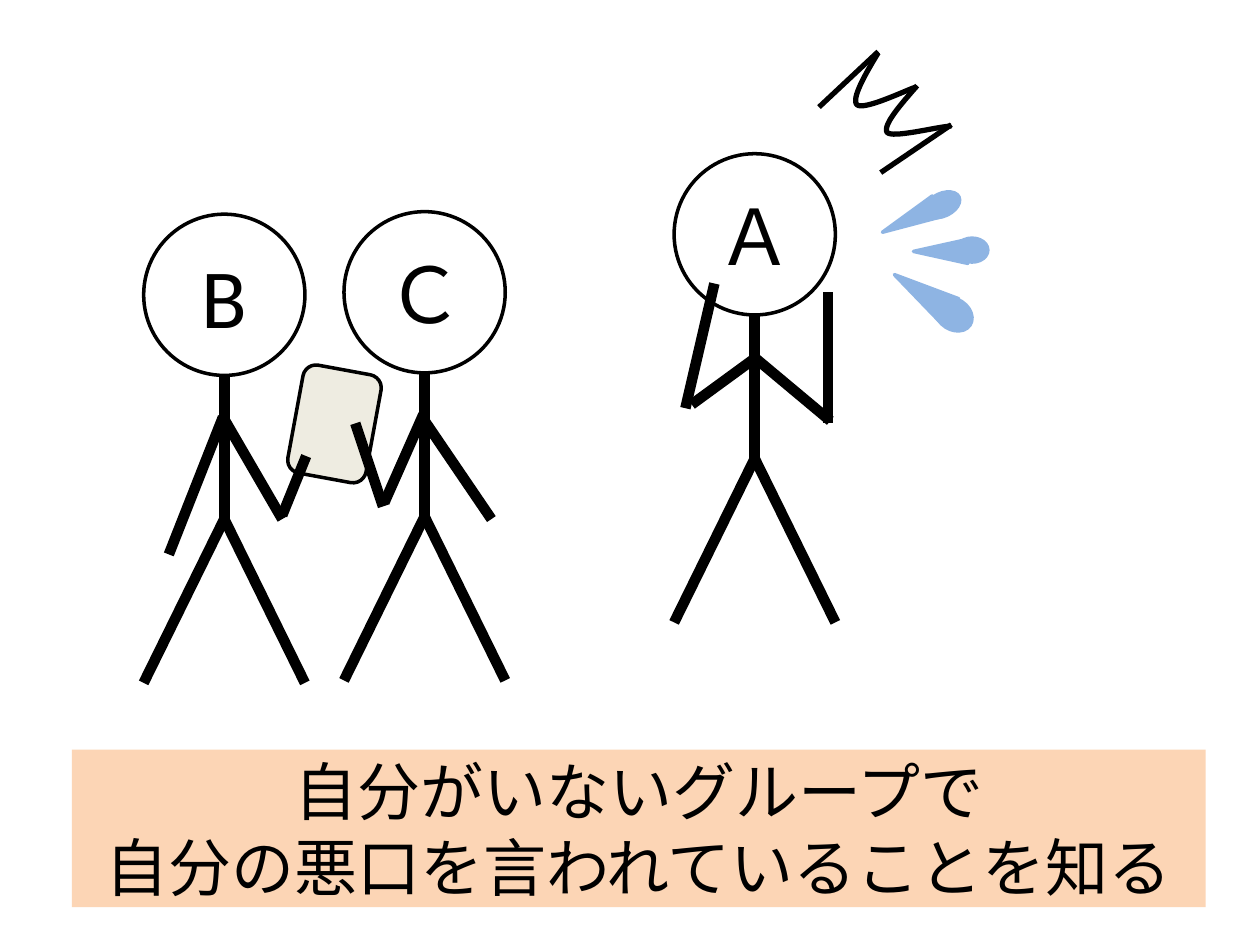
from dataclasses import dataclass

from lxml import etree
from pptx import Presentation
from pptx.dml.color import RGBColor
from pptx.enum.shapes import MSO_CONNECTOR, MSO_SHAPE
from pptx.enum.text import MSO_ANCHOR, PP_ALIGN
from pptx.oxml.ns import qn
from pptx.util import Emu, Pt

PX = 9144  # EMU per px, 100 px to the inch
STRAIGHT = MSO_CONNECTOR.STRAIGHT
RECT, ROUNDED = MSO_SHAPE.RECTANGLE, MSO_SHAPE.ROUNDED_RECTANGLE
HEAD = MSO_SHAPE.FLOWCHART_CONNECTOR
OVAL, TRIANGLE = MSO_SHAPE.OVAL, MSO_SHAPE.ISOSCELES_TRIANGLE
MIDDLE, CENTER = MSO_ANCHOR.MIDDLE, PP_ALIGN.CENTER


@dataclass(frozen=True)
class Theme:
    font: str = "Calibri"
    ink: str = "000000"
    paper: str = "FFFFFF"
    tablet: str = "EEECE1"
    caption: str = "FCD5B5"
    sweat: str = "8EB4E3"
    caption_size: int = 36
    name_size: int = 44
    big_name_size: int = 48
    outline: int = 2
    stroke: int = 3
    limb: int = 6


class Scene:
    def __init__(self, s, theme):
        self.s, self.theme = s, theme

    def set_line(self, line, color, width):
        line.color.rgb = RGBColor.from_string(color)
        line.width = Pt(width)

    def shape(self, kind, box, fill, line=None, rotation=0):
        sp = self.s.shapes.add_shape(kind, *(Emu(v * PX) for v in box))
        sp.shadow.inherit = False
        sp.rotation = rotation
        sp.fill.solid()
        sp.fill.fore_color.rgb = RGBColor.from_string(fill)
        if line:
            self.set_line(sp.line, line, self.theme.outline)
        else:
            sp.line.fill.background()
        return sp

    def label(self, sp, text, size):
        tf = sp.text_frame
        tf.word_wrap = True
        tf.vertical_anchor = MIDDLE
        p = tf.paragraphs[0]
        p.text = text
        p.alignment = CENTER
        for r in p.runs:
            r.font.name = self.theme.font
            r.font.size = Pt(size)
            r.font.color.rgb = RGBColor.from_string(self.theme.ink)

    def line(self, start, end, width):
        sp = self.s.shapes.add_connector(
            STRAIGHT, *(Emu(v * PX) for v in (*start, *end)))
        self.set_line(sp.line, self.theme.ink, width)
        etree.SubElement(sp._element.spPr, qn("a:effectLst"))

    def curve(self, start, *segments, steps=16):
        """Draw cubic Bezier segments, each (control, control, end)."""
        points, last = [], start
        for c1, c2, end in segments:
            for i in range(1, steps + 1):
                t = i / steps
                u = 1 - t
                points.append(tuple(
                    round((u**3 * a + 3 * u * u * t * b + 3 * u * t * t * c + t**3 * d) * PX)
                    for a, b, c, d in zip(last, c1, c2, end)))
            last = end
        fb = self.s.shapes.build_freeform(*(v * PX for v in start))
        fb.add_line_segments(points, close=False)
        sp = fb.convert_to_shape()
        sp.shadow.inherit = False
        sp.fill.background()
        self.set_line(sp.line, self.theme.ink, self.theme.stroke)

    def stick_figure(self, name, size, cx, top, arms):
        """Draw head, trunk and legs from the head's top centre, then the arm parts."""
        t = self.theme
        head = self.shape(HEAD, (cx - 64, top, 128, 128), t.paper, t.ink)
        self.label(head, name, size)
        neck, hip, feet = top + 128, top + 242, top + 372
        self.line((cx, neck), (cx, hip), t.limb)
        for side in (-64, 64):
            self.line((cx, hip), (cx + side, feet), t.limb)
        for start, end in arms:
            self.line(start, end, t.limb)

    def sweat_drop(self, bulb, tail, rotation):
        color = self.theme.sweat
        self.shape(OVAL, bulb, color, color, rotation)
        self.shape(TRIANGLE, tail, color, color, rotation)

    def caption(self, box, text):
        sp = self.shape(RECT, box, self.theme.caption)
        self.label(sp, text, self.theme.caption_size)


def main():
    prs = Presentation()
    prs.slide_width, prs.slide_height = Emu(1000 * PX), Emu(750 * PX)
    t = Theme()
    scene = Scene(prs.slides.add_slide(prs.slide_layouts[6]), t)

    scene.shape(ROUNDED, (234, 293, 63, 87), t.tablet, t.ink, 10.4)
    scene.caption((57, 595, 900, 125),
                  "自分がいないグループで\v自分の悪口を言われていることを知る")

    figures = [
        ("B", t.big_name_size, 178, 170,
         [((177, 331), (224, 412)), ((243, 362), (224, 409)), ((177, 331), (134, 440))]),
        ("Ｃ", t.name_size, 337, 168,
         [((336, 329), (305, 399)), ((282, 336), (304, 402)), ((337, 334), (390, 412))]),
        ("Ａ", t.name_size, 599, 122,
         [((598, 283), (659, 334)), ((657, 232), (657, 336)),
          ((549, 321), (601, 283)), ((567, 225), (544, 324))]),
    ]
    for figure in figures:
        scene.stick_figure(*figure)

    # Jagged shock mark
    scene.curve((697, 42), ((686, 60), (676, 78), (680, 83)),
                ((685, 88), (716, 73), (727, 69)))
    scene.curve((728, 68), ((714, 84), (701, 99), (704, 105)),
                ((708, 110), (742, 101), (755, 100)))
    scene.line((755, 99), (699, 137), t.stroke)
    scene.line((697, 41), (650, 85), t.stroke)

    drops = [
        ((762, 186, 19, 25), (737, 178, 19, 43), 270),
        ((739, 148, 18, 29), (713, 150, 18, 48), 244.6),
        ((745, 234, 24, 31), (720, 206, 24, 53), 303.3),
    ]
    for drop in drops:
        scene.sweat_drop(*drop)

    prs.save("out.pptx")


if __name__ == "__main__":
    main()
